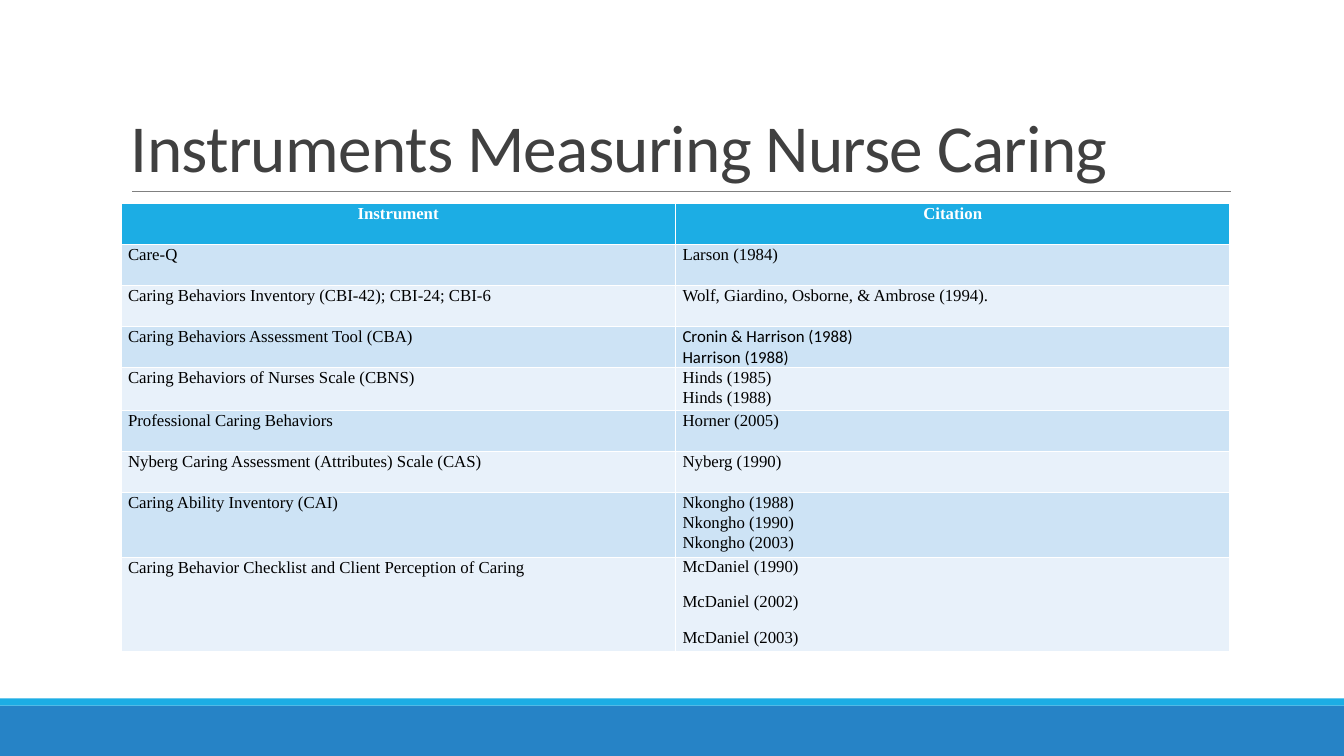
"""Build a slide with a table of instruments that measure nurse caring."""
from pptx import Presentation
from pptx.dml.color import RGBColor
from pptx.enum.shapes import MSO_CONNECTOR as Connector, MSO_SHAPE as Shape
from pptx.enum.text import MSO_ANCHOR as Anchor, PP_ALIGN as Align
from pptx.oxml.ns import qn
from pptx.util import Inches, Pt
from lxml.etree import SubElement

WIDTH, HEIGHT = 13.33, 7.5
LEFT, CONTENT_WIDTH = 1.2, 11
TITLE = "Instruments Measuring Nurse Caring"
HEADER = ("Instrument", "Citation")
INSTRUMENTS = [
    ("Care-Q", ["Larson (1984)"]),
    ("Caring Behaviors Inventory (CBI-42); CBI-24; CBI-6",
     ["Wolf, Giardino, Osborne, & Ambrose (1994)."]),
    ("Caring Behaviors Assessment Tool (CBA)",
     ["Cronin & Harrison (1988)", "Harrison (1988)"]),
    ("Caring Behaviors of Nurses Scale (CBNS)", ["Hinds (1985)", "Hinds (1988)"]),
    ("Professional Caring Behaviors", ["Horner (2005)"]),
    ("Nyberg Caring Assessment (Attributes) Scale (CAS)", ["Nyberg (1990)"]),
    ("Caring Ability Inventory (CAI)",
     ["Nkongho (1988)", "Nkongho (1990)", "Nkongho (2003)"]),
    ("Caring Behavior Checklist and Client Perception of Caring",
     ["McDaniel (1990)", "McDaniel (2002)", "McDaniel (2003)"]),
]
ROW_HEIGHT, TALL_ROWS = 0.407, {7: 0.59, 8: 0.89}
BANDS = ("E8F1FA", "CDE3F5")
BARS = [(7, 0.5, "2683C6"), (6.93, 0.07, "1CADE4")]
SERIF = {"name": "Times New Roman", "size": Pt(12), "bold": False}
HEADER_FONT = {**SERIF, "bold": True}
SANS = {**SERIF, "name": "Calibri"}
TITLE_FONT = {"name": "Calibri", "size": Pt(48)}
BODY = {"line_spacing": 1.07}
CENTERED = {**BODY, "alignment": Align.CENTER}
SPACED = {"space_before": Pt(12)}
CITATION_STYLES = {3: ({}, SANS), 8: (SPACED, SERIF)}
CELL_MARGINS = {"margin_left": Inches(0.07), "margin_right": Inches(0.07),
                "margin_top": 0, "margin_bottom": 0}


def color(value):
    return RGBColor.from_string(value)


def apply(target, values):
    for name, value in values.items():
        setattr(target, name, value)


def paint(fill, value):
    fill.solid()
    fill.fore_color.rgb = color(value)


def write(frame, lines, layout, font, ink):
    for index, line in enumerate(lines):
        para = frame.add_paragraph() if index else frame.paragraphs[0]
        apply(para, layout)
        span = para.add_run()
        span.text = line
        apply(span.font, font)
        span.font.color.rgb = color(ink)


def fill_cell(cell, lines, layout, font, ink, back):
    apply(cell, CELL_MARGINS)
    paint(cell.fill, back)
    write(cell.text_frame, lines, layout, font, ink)


def add_bars(page):
    for top, height, shade in BARS:
        bar = page.shapes.add_shape(Shape.RECTANGLE, 0, Inches(top),
                                    Inches(WIDTH), Inches(height))
        bar.shadow.inherit = False
        paint(bar.fill, shade)
        bar.line.fill.background()


def add_title(page):
    rule = page.shapes.add_connector(Connector.STRAIGHT, Inches(1.31), Inches(1.9),
                                     Inches(12.21), Inches(1.9))
    rule.line.color.rgb = color("808080")
    rule.line.width = Pt(0.5)
    SubElement(rule._element.spPr, qn("a:effectLst"))
    box = page.shapes.add_textbox(Inches(LEFT), Inches(0.31),
                                  Inches(CONTENT_WIDTH), Inches(1.59))
    frame = box.text_frame
    apply(frame, {"word_wrap": True, "vertical_anchor": Anchor.BOTTOM})
    write(frame, [TITLE], {"line_spacing": 0.85}, TITLE_FONT, "404040")
    frame.paragraphs[0].runs[0].font._element.set("spc", "-50")


def add_instruments(page):
    count = len(INSTRUMENTS) + 1
    heights = [TALL_ROWS.get(row, ROW_HEIGHT) for row in range(count)]
    table = page.shapes.add_table(count, len(HEADER), Inches(LEFT), Inches(2.02),
                                  Inches(CONTENT_WIDTH), Inches(sum(heights))).table
    for row, height in zip(table.rows, heights):
        row.height = Inches(height)
    for column, label in enumerate(HEADER):
        fill_cell(table.cell(0, column), [label], CENTERED, HEADER_FONT,
                  "FFFFFF", "1CADE4")
    for row, (instrument, citations) in enumerate(INSTRUMENTS, 1):
        back = BANDS[row % 2]
        layout, font = CITATION_STYLES.get(row, (BODY, SERIF))
        fill_cell(table.cell(row, 0), [instrument], BODY, SERIF, "000000", back)
        fill_cell(table.cell(row, 1), citations, layout, font, "000000", back)


deck = Presentation()
apply(deck, {"slide_width": Inches(WIDTH), "slide_height": Inches(HEIGHT)})
page = deck.slides.add_slide(deck.slide_layouts[6])
add_bars(page)
add_title(page)
add_instruments(page)
deck.save("out.pptx")
